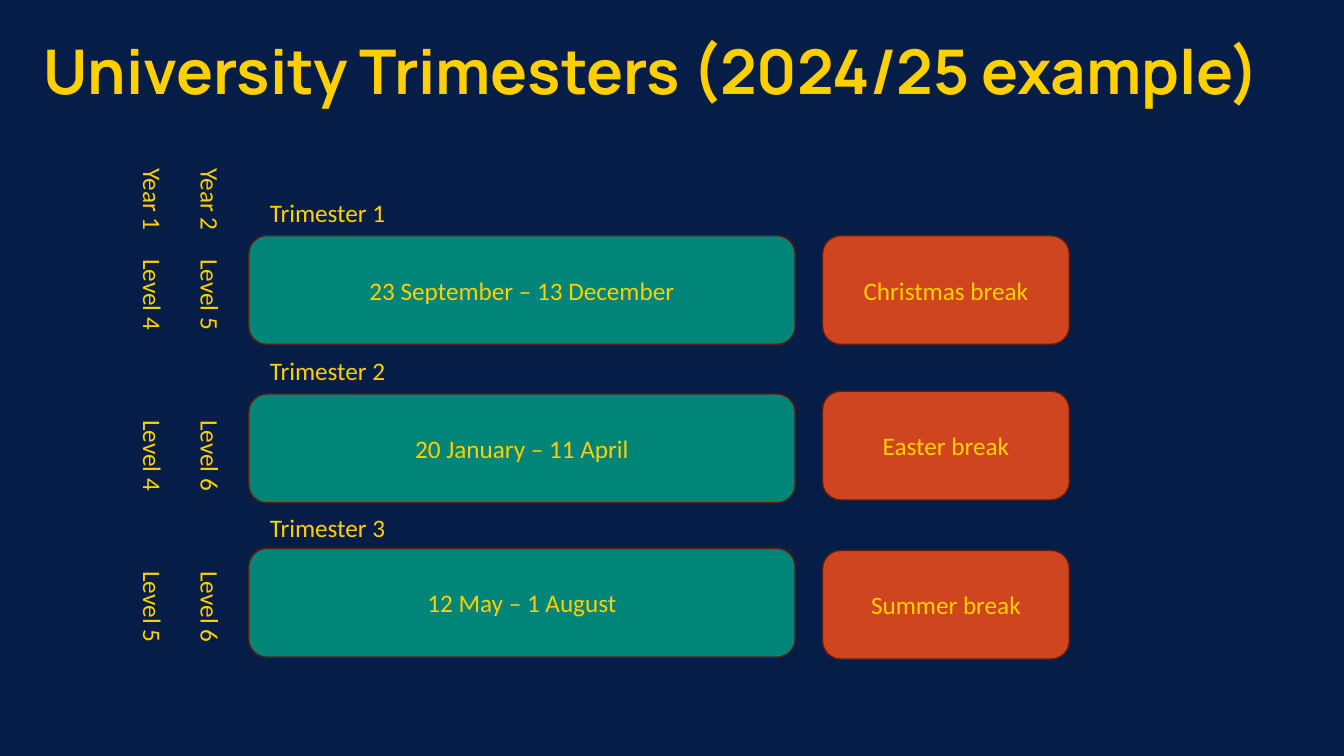
import pptx
import pptx.dml.color
import pptx.enum.shapes
import pptx.enum.text
import pptx.oxml
import pptx.util
from dataclasses import dataclass

Cm, Pt = pptx.util.Cm, pptx.util.Pt
Align = pptx.enum.text.PP_ALIGN
Anchor = pptx.enum.text.MSO_ANCHOR

# Content
TITLE = "University Trimesters (2024/25 example)"
TERMS = [  # name, dates, break, top of dates box, top of break box
    ("Trimester 1", "23 September – 13 December", "Christmas break", 5.94, 5.94),
    ("Trimester 2", "20 January – 11 April", "Easter break", 9.93, 9.86),
    ("Trimester 3", "12 May – 1 August", "Summer break", 13.82, 13.87),
]
YEARS = [
    ("Year 1", "Level 4", "Level 4", "Level 5"),
    ("Year 2", "Level 5", "Level 6", "Level 6"),
]


@dataclass
class Theme:
    back: str = "061D48"
    gold: str = "FFD000"
    teal: str = "008578"
    red: str = "CF4520"
    edge: str = "5B1E0E"
    head: str = "Manrope"
    body: str = "Calibri"
    big: int = 44
    small: int = 18


theme = Theme()

# Layout, in centimetres
BAR_X, BAR_W = 6.27, 13.77
BREAK_X, BREAK_W = 20.73, 6.22
BOX_H = 2.74
NAME_X, NAME_Y, NAME_W, NAME_H = 6.55, 4.85, 9.75, 1.02
NAME_STEP = 3.97
YEAR_X, YEAR_Y, YEAR_W, YEAR_H = 3.1, 3.99, 1.27, 12.57
YEAR_STEP = 1.45
STOPS = (2.29, 6.35, 10.16)


def color(code):
    return pptx.dml.color.RGBColor.from_string(code)


def write(para, text, face=theme.body, size=theme.small, bold=False):
    run = para.add_run()
    run.text = text
    run.font.name = face
    run.font.size = Pt(size)
    run.font.bold = bold
    run.font.color.rgb = color(theme.gold)


def add_box(slide, text, x, y, w, fill):
    kind = pptx.enum.shapes.MSO_SHAPE.ROUNDED_RECTANGLE
    box = slide.shapes.add_shape(kind, Cm(x), Cm(y), Cm(w), Cm(BOX_H))
    box.shadow.inherit = False
    box.fill.solid()
    box.fill.fore_color.rgb = color(fill)
    box.line.color.rgb = color(theme.edge)
    box.line.width = Pt(1)
    frame = box.text_frame
    frame.word_wrap = True
    frame.vertical_anchor = Anchor.MIDDLE
    para = frame.paragraphs[0]
    para.alignment = Align.CENTER
    write(para, text)


def add_text(slide, x, y, w, h):
    frame = slide.shapes.add_textbox(Cm(x), Cm(y), Cm(w), Cm(h)).text_frame
    frame.word_wrap = True
    return frame


def add_year(slide, words, x):
    frame = add_text(slide, x, YEAR_Y, YEAR_W, YEAR_H)
    frame._txBody.bodyPr.set("vert", "vert")
    para = frame.paragraphs[0]
    # Tab stops line the levels up with the trimesters
    ns = "http://schemas.openxmlformats.org/drawingml/2006/main"
    tabs = "".join(f'<a:tab pos="{int(Cm(stop))}" algn="l"/>' for stop in STOPS)
    xml = f'<a:tabLst xmlns:a="{ns}">{tabs}</a:tabLst>'
    para._p.get_or_add_pPr().append(pptx.oxml.parse_xml(xml))
    write(para, "\t".join(words))


def main():
    deck = pptx.Presentation()
    deck.slide_width, deck.slide_height = Cm(33.87), Cm(19.05)
    slide = deck.slides.add_slide(deck.slide_layouts[5])
    slide.background.fill.solid()
    slide.background.fill.fore_color.rgb = color(theme.back)

    # Title
    title = slide.shapes.title
    title.left, title.top = Cm(0.84), Cm(0.03)
    title.width, title.height = Cm(32.21), Cm(3.68)
    frame = title.text_frame
    frame.auto_size = pptx.enum.text.MSO_AUTO_SIZE.NONE
    frame.vertical_anchor = Anchor.MIDDLE
    para = frame.paragraphs[0]
    para.alignment = Align.LEFT
    para.line_spacing = 0.9
    write(para, TITLE, theme.head, theme.big, True)

    # Trimesters and breaks
    for row, (name, dates, rest, bar_y, rest_y) in enumerate(TERMS):
        add_box(slide, dates, BAR_X, bar_y, BAR_W, theme.teal)
        add_box(slide, rest, BREAK_X, rest_y, BREAK_W, theme.red)
        label = add_text(slide, NAME_X, NAME_Y + row * NAME_STEP, NAME_W, NAME_H)
        write(label.paragraphs[0], name)

    # Year columns
    for col, words in enumerate(YEARS):
        add_year(slide, words, YEAR_X + col * YEAR_STEP)

    deck.save("out.pptx")


if __name__ == "__main__":
    main()
